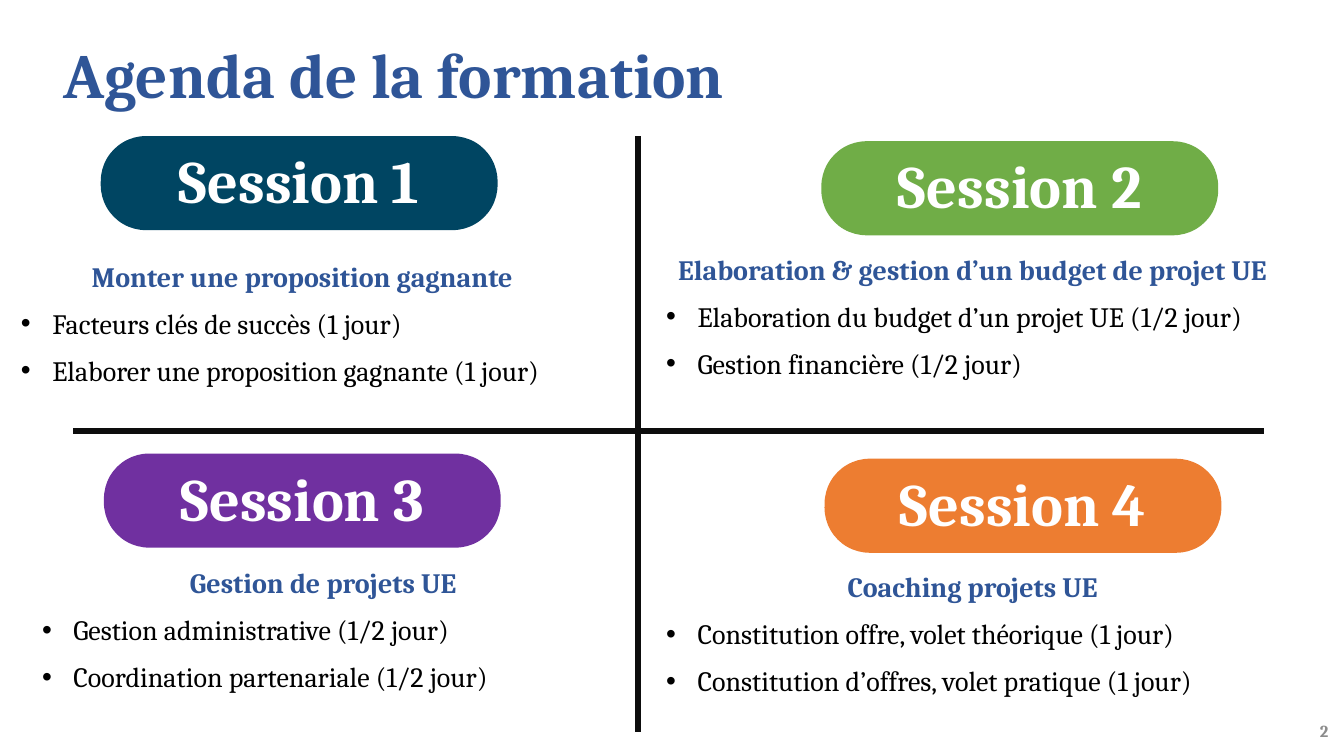
"""Build the training agenda slide: four sessions around a cross."""
from lxml import etree
from pptx import Presentation
from pptx import util as u
from pptx.dml.color import RGBColor
from pptx.enum import shapes, text
from pptx.oxml.ns import qn

FONT = "Cambria"
COLOURS = {
    "heading": "2F5597", "body": "000000", "page": "8C8C8C", "axis": "0D0D0D",
    "label": "FFFFFF", "session 1": "004562", "session 2": "70AD47",
    "session 3": "7030A0", "session 4": "ED7D31",
}
PILL_SIZE = (10, 2.37)
TOPICS_HEIGHT = 3.71

SESSIONS = [
    ("Session 1", (2.54, 3.43), (0.28, 6.07, 14.68),
     "Monter une proposition gagnante",
     ["Facteurs clés de succès (1 jour)",
      "Elaborer une proposition gagnante (1 jour)"]),
    ("Session 2", (20.7, 3.56), (16.54, 5.89, 15.95),
     "Elaboration & gestion d’un budget de projet UE",
     ["Elaboration du budget d’un projet UE (1/2 jour)",
      "Gestion financière (1/2 jour)"]),
    ("Session 3", (2.62, 11.43), (0.81, 13.79, 14.68),
     "Gestion de projets UE",
     ["Gestion administrative (1/2 jour)",
      "Coordination partenariale (1/2 jour)"]),
    ("Session 4", (20.78, 11.56), (16.54, 13.89, 15.95),
     "Coaching projets UE",
     ["Constitution offre, volet théorique (1 jour)",
      "Constitution d’offres, volet pratique (1 jour)"]),
]


def cm(lengths):
    """Convert a sequence of centimetre values to slide lengths."""
    return [u.Cm(length) for length in lengths]


def colour(name):
    """Return the named palette colour."""
    return RGBColor.from_string(COLOURS[name])


def write(paragraph, words, size, tint, bold=True,
          align=text.PP_ALIGN.LEFT, spacing=1.0):
    """Fill a paragraph and format its run."""
    paragraph.text = words
    paragraph.alignment = align
    paragraph.line_spacing = spacing
    font = paragraph.runs[0].font
    font.name, font.size, font.bold = FONT, u.Pt(size), bold
    font.color.rgb = colour(tint)


def add_bullet(paragraph):
    """Give a paragraph a hanging round bullet."""
    properties = paragraph._p.get_or_add_pPr()
    indent = u.Cm(0.79)
    properties.set("marL", str(indent))
    properties.set("indent", str(-indent))
    etree.SubElement(properties, qn("a:buFont")).set("typeface", "Arial")
    etree.SubElement(properties, qn("a:buChar")).set("char", "•")


def add_frame(slide, box, anchor):
    """Add a wrapping text box and return its text frame."""
    frame = slide.shapes.add_textbox(*cm(box)).text_frame
    frame.word_wrap = True
    frame.vertical_anchor = anchor
    return frame


def add_line(slide, ends):
    """Add one thick line of the cross between two points."""
    axis = slide.shapes.add_connector(shapes.MSO_CONNECTOR.STRAIGHT, *cm(ends))
    axis.line.color.rgb = colour("axis")
    axis.line.width = u.Pt(4.5)
    etree.SubElement(axis._element.spPr, qn("a:effectLst"))


def add_cross(slide, box):
    """Divide the box into four with a vertical and a horizontal line."""
    left, top, width, height = box
    middle_x, middle_y = 16.08, 10.87
    add_line(slide, (middle_x, top, middle_x, top + height))
    add_line(slide, (left, middle_y, left + width, middle_y))


def add_pill(slide, corner, label):
    """Add a session's rounded label."""
    pill = slide.shapes.add_shape(
        shapes.MSO_SHAPE.ROUNDED_RECTANGLE, *cm(corner + PILL_SIZE))
    pill.adjustments[0] = 0.48
    pill.shadow.inherit = False
    pill.fill.solid()
    pill.fill.fore_color.rgb = colour(label.lower())
    pill.line.fill.background()
    frame = pill.text_frame
    frame.vertical_anchor = text.MSO_ANCHOR.MIDDLE
    frame.margin_top, frame.margin_bottom = cm((0, 0.18))
    write(frame.paragraphs[0], label, 43, "label", align=text.PP_ALIGN.CENTER)


def add_topics(slide, box, theme, topics):
    """Add a session's theme followed by its bulleted topics."""
    frame = add_frame(slide, box + (TOPICS_HEIGHT,), text.MSO_ANCHOR.TOP)
    write(frame.paragraphs[0], theme, 20, "heading",
          align=text.PP_ALIGN.CENTER, spacing=1.4)
    for topic in topics:
        paragraph = frame.add_paragraph()
        write(paragraph, topic, 20, "body", bold=False, spacing=1.4)
        add_bullet(paragraph)


def add_title(slide, box):
    """Add the slide title."""
    frame = add_frame(slide, box, text.MSO_ANCHOR.MIDDLE)
    write(frame.paragraphs[0], "Agenda de la formation", 45, "heading",
          spacing=0.9)


def add_page_number(slide, box):
    """Add the page number at the right of its box."""
    frame = add_frame(slide, box, text.MSO_ANCHOR.MIDDLE)
    write(frame.paragraphs[0], "2", 12, "page", align=text.PP_ALIGN.RIGHT)


def main():
    """Build and save the slide."""
    deck = Presentation()
    deck.slide_width, deck.slide_height = cm((33.87, 19.05))
    slide = deck.slides.add_slide(deck.slide_layouts[6])
    add_title(slide, (1.35, 1.02, 31.14, 1.9))
    add_page_number(slide, (26.11, 17.91, 7.62, 1.02))
    add_cross(slide, (1.85, 3.43, 30, 15.01))
    for label, corner, box, theme, topics in SESSIONS:
        add_pill(slide, corner, label)
        add_topics(slide, box, theme, topics)
    deck.save("out.pptx")


if __name__ == "__main__":
    main()
